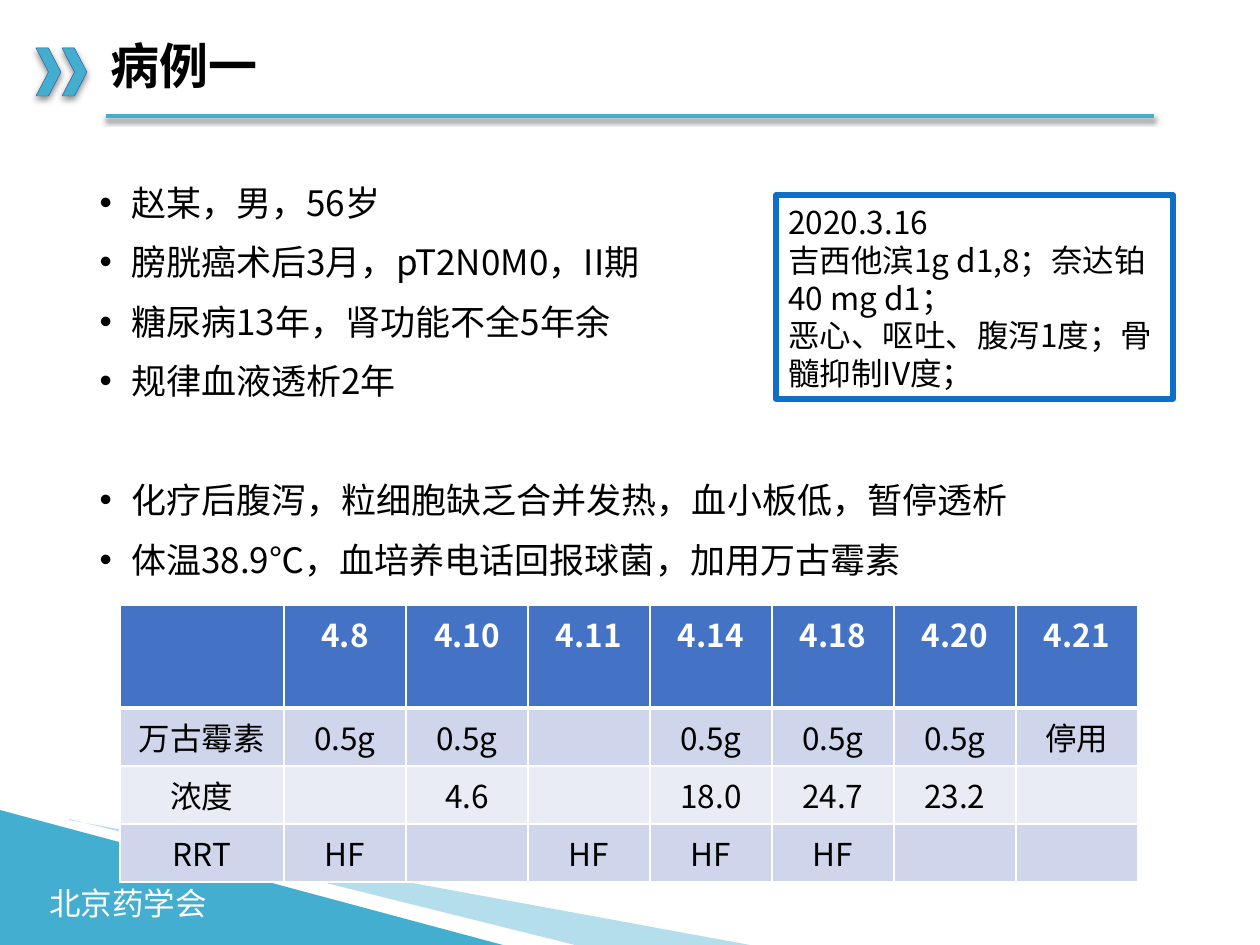
"""Build the case slide with patient notes, a chemo box and a drug table."""
from pptx import Presentation
from pptx import util as u
from pptx.dml.color import RGBColor
from pptx.enum import shapes, text
from pptx.oxml import parse_xml
from pptx.oxml.ns import nsdecls

SCALE = 914400 / 126
FACE = "Noto Sans CJK SC"
SKY = RGBColor(0x44, 0xAE, 0xD0)
NAVY = RGBColor(0x32, 0x54, 0x91)
BLUE = RGBColor(0x0F, 0x6F, 0xC6)
HEAD = RGBColor(0x44, 0x72, 0xC4)
DARK = RGBColor(0xCF, 0xD5, 0xEA)
PALE = RGBColor(0xE9, 0xEB, 0xF5)
BLACK = RGBColor(0, 0, 0)
WHITE = RGBColor(0xFF, 0xFF, 0xFF)

NOTES = [
    "赵某，男，56岁",
    "膀胱癌术后3月，pT2N0M0，II期",
    "糖尿病13年，肾功能不全5年余",
    "规律血液透析2年",
    "化疗后腹泻，粒细胞缺乏合并发热，血小板低，暂停透析",
    "体温38.9℃，血培养电话回报球菌，加用万古霉素",
]
CHEMO = [
    "2020.3.16",
    "吉西他滨1g d1,8；奈达铂 40 mg d1；",
    "恶心、呕吐、腹泻1度；骨髓抑制IV度；",
]
ROWS = [
    ["", "4.8", "4.10", "4.11", "4.14", "4.18", "4.20", "4.21"],
    ["万古霉素", "0.5g", "0.5g", "", "0.5g", "0.5g", "0.5g", "停用"],
    ["浓度", "", "4.6", "", "18.0", "24.7", "23.2", ""],
    ["RRT", "HF", "", "HF", "HF", "HF", "", ""],
]


def px(*nums):
    """Turn pixels into EMU."""
    return [u.Emu(round(n * SCALE)) for n in nums]


def node(tag, attrs="", inner=""):
    """Make one drawing element."""
    return parse_xml(f"<a:{tag} {nsdecls('a')} {attrs}>{inner}</a:{tag}>")


def put(item, vals):
    """Set each value on the item."""
    for key, val in vals.items():
        setattr(item, key, val)


def write(para, words, size, tint=BLACK, bold=False, **form):
    """Write one run into a paragraph."""
    put(para, form)
    run = para.add_run()
    run.text = words
    put(run.font, {"size": u.Pt(size), "bold": bold, "name": FACE})
    run.font.color.rgb = tint
    run._r.get_or_add_rPr().append(node("ea", f'typeface="{FACE}"'))


def lines(frame, words):
    """Yield a paragraph for each line of words."""
    for i, line in enumerate(words):
        yield i, frame.add_paragraph() if i else frame.paragraphs[0], line


def shade(item, tint, alpha, blur, dist):
    """Cast a shadow straight down."""
    attrs = (f'blurRad="{u.Pt(blur)}" dist="{u.Pt(dist)}" '
             'dir="5400000" algn="t" rotWithShape="0"')
    color = f'<a:srgbClr val="{tint}"><a:alpha val="{alpha * 1000}"/></a:srgbClr>'
    props = item._element.spPr
    group = node("effectLst")
    for old in props.findall(group.tag):
        props.remove(old)
    group.append(node("outerShdw", attrs, color))
    props.append(group)


def paint(item, fill=None, edge=None, width=0):
    """Set the fill and outline of a shape."""
    item.shadow.inherit = False
    if fill is None:
        item.fill.background()
    else:
        item.fill.solid()
        item.fill.fore_color.rgb = fill
    if edge is None:
        item.line.fill.background()
    else:
        item.line.color.rgb = edge
        item.line.width = u.Pt(width)


def rule(slide):
    """Draw the line under the title."""
    line = slide.shapes.add_connector(
        shapes.MSO_CONNECTOR.STRAIGHT, *px(1154, 116, 106, 116))
    line.line.color.rgb = SKY
    line.line.width = u.Pt(2.25)
    shade(line, "808080", 100, 3, 2)


def base(slide):
    """Draw the corner wedge, the pale ray and the footer."""
    wedge = slide.shapes.add_shape(
        shapes.MSO_SHAPE.ISOSCELES_TRIANGLE, *px(0, 810, 503, 135))
    wedge.adjustments[0] = 0
    paint(wedge, SKY)
    foot = slide.shapes.add_textbox(*px(37, 878, 184, 50)).text_frame
    foot.word_wrap = False
    write(foot.paragraphs[0], "北京药学会", 18, WHITE, line_spacing=u.Pt(21.6))
    pen = slide.shapes.build_freeform(69, 820, scale=SCALE)
    pen.add_line_segments([(750, 945), (575, 945), (69, 819)])
    ray = pen.convert_to_shape()
    paint(ray, SKY)
    tint = ray._element.spPr.find(".//" + node("srgbClr").tag)
    tint.append(node("alpha", 'val="40000"'))


def marks(slide):
    """Draw the two chevrons by the title."""
    for left in (62, 36):
        mark = slide.shapes.add_shape(
            shapes.MSO_SHAPE.CHEVRON, *px(left, 48, 25, 48))
        paint(mark, SKY, NAVY, 0.25)
        shade(mark, "000000", 46, 4, 2)


def place(item, *spot):
    """Move a placeholder and return its text frame."""
    put(item, dict(zip(("left", "top", "width", "height"), px(*spot))))
    item.text_frame.auto_size = text.MSO_AUTO_SIZE.NONE
    return item.text_frame


def head(slide):
    """Fill the title."""
    frame = place(slide.shapes.title, 98, 28, 963, 82)
    frame.vertical_anchor = text.MSO_ANCHOR.MIDDLE
    write(frame.paragraphs[0], "病例一", 28, bold=True,
          alignment=text.PP_ALIGN.LEFT, line_spacing=0.9)


def notes(slide):
    """Fill the bullet list, with a wide gap before the second group."""
    frame = place(slide.placeholders[1], 87, 175, 1086, 425)
    for i, para, line in lines(frame, NOTES):
        props = para._p.get_or_add_pPr()
        props.set("marL", "228600")
        props.set("indent", "-228600")
        props.append(node("buFont", 'typeface="Arial"'))
        props.append(node("buChar", 'char="•"'))
        gap = {0: 0, 4: 44}.get(i, 10)
        write(para, line, 20, space_before=u.Pt(gap), line_spacing=u.Pt(24))


def grid(slide):
    """Draw the drug table."""
    table = slide.shapes.add_table(
        len(ROWS), len(ROWS[0]), *px(120, 605, 1018, 277)).table
    for i, col in enumerate(table.columns):
        col.width = px(122 if i else 164)[0]
    for i, row in enumerate(table.rows):
        row.height = px(58 if i else 103)[0]
        for j, words in enumerate(ROWS[i]):
            cell = table.cell(i, j)
            wide = {"lnT": 3 if i == 1 else 1, "lnB": 1 if i else 3}
            for side in ("lnL", "lnR", "lnT", "lnB"):
                cell._tc.get_or_add_tcPr().append(node(
                    side, f'w="{u.Pt(wide.get(side, 1))}"',
                    '<a:solidFill><a:srgbClr val="FFFFFF"/></a:solidFill>'))
            cell.fill.solid()
            cell.fill.fore_color.rgb = (HEAD, DARK, PALE, DARK)[i]
            if words:
                write(cell.text_frame.paragraphs[0], words, 18,
                      BLACK if i else WHITE, i == 0,
                      alignment=text.PP_ALIGN.CENTER)


def chemo(slide):
    """Draw the framed box on chemotherapy."""
    box = slide.shapes.add_shape(
        shapes.MSO_SHAPE.RECTANGLE, *px(776, 195, 397, 204))
    paint(box, edge=BLUE, width=3)
    frame = box.text_frame
    put(frame, {"word_wrap": True, "vertical_anchor": text.MSO_ANCHOR.TOP,
                "margin_top": px(8)[0]})
    for _, para, line in lines(frame, CHEMO):
        write(para, line, 18, alignment=text.PP_ALIGN.LEFT,
              line_spacing=u.Pt(21.6))


def main():
    """Build and save the slide."""
    deck = Presentation()
    deck.slide_width, deck.slide_height = px(1260, 945)
    slide = deck.slides.add_slide(deck.slide_layouts[1])
    for draw in (rule, base, marks, head, notes, grid, chemo):
        draw(slide)
    deck.save("out.pptx")


if __name__ == "__main__":
    main()
